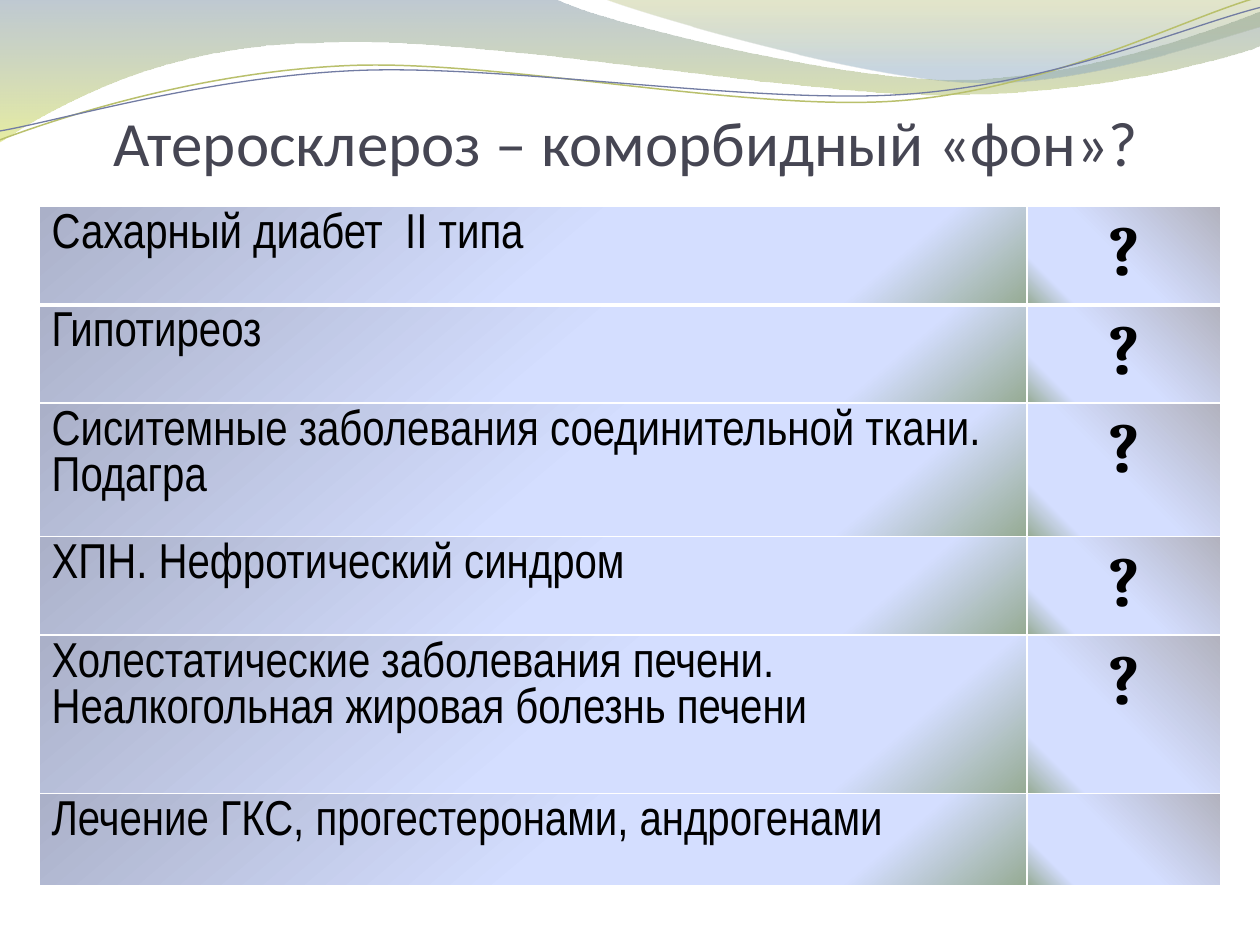
from dataclasses import dataclass
from math import cos, radians, sin

from lxml.etree import SubElement
from pptx import Presentation
from pptx.dml.color import RGBColor
from pptx.enum.text import MSO_ANCHOR, PP_ALIGN
from pptx.oxml import parse_xml
from pptx.oxml.ns import nsdecls, qn
from pptx.util import Inches, Pt


@dataclass(frozen=True)
class Theme:
    title: str = "464653"
    text: str = "000000"
    rule: str = "FFFFFF"
    green: str = "B9C06C"
    blue: str = "727CA3"
    title_size: int = 36
    text_size: int = 28
    mark_size: int = 40
    # Each stop: position %, colour, opacity %
    wave: tuple = ((0, "72889B", 45), (100, "D3DE57", 55))
    crest: tuple = ((0, "A4AC50", 30), (80, "84A3BD", 45))
    tail: tuple = ((53, "D4DEFF", 100), (83, "D4DEFF", 100), (100, "96AB94", 100))
    name_fill: tuple = ((0, "AAB0C8", 100),) + tail
    mark_fill: tuple = ((0, "B2B2BE", 100),) + tail


THEME = Theme()
TILT = 2.7

ROWS = (
    ("Сахарный диабет  II типа", "?", 0.78),
    ("Гипотиреоз", "?", 0.78),
    ("Сиситемные заболевания соединительной ткани. Подагра", "?", 1.06),
    ("ХПН. Нефротический синдром", "?", 0.78),
    ("Холестатические заболевания печени. Неалкогольная жировая болезнь печени",
     "?", 1.26),
    ("Лечение ГКС, прогестеронами, андрогенами", "", 0.73),
)

# Outlines: a start point, then straight steps (one point) or curves (three)
WAVE = (
    ((0, -0.01),), ((4.4, -0.01),),
    ((4.76, 0.17), (6.64, 0.63), (7.58, 0.63)),
    ((8.53, 0.63), (9.58, 0.26), (10, 0.09)),
    ((10.01, 0.36),),
    ((9.83, 0.44), (8.7, 0.76), (7.46, 0.75)),
    ((6.22, 0.75), (3.82, 0.28), (2.57, 0.34)),
    ((1.29, 0.35), (0.46, 0.83), (-0.01, 1.13)),
    ((0, -0.01),),
)
CREST = (
    ((4.79, -0.01),),
    ((5.09, 0.11), (6.82, 0.62), (7.69, 0.65)),
    ((8.56, 0.69), (9.61, 0.32), (10, 0.21)),
    ((10, 0),), ((4.79, -0.01),),
)
GREEN = (
    ((0, 1.11),),
    ((0.48, 0.93), (1.58, 0.57), (2.77, 0.52)),
    ((3.95, 0.47), (5.93, 0.89), (7.13, 0.8)),
    ((8.33, 0.71), (9.38, 0.15), (9.98, -0.02)),
)
BLUE = (
    ((0, 1.04),),
    ((0.47, 0.96), (1.64, 0.61), (2.83, 0.56)),
    ((4.03, 0.51), (5.97, 0.83), (7.17, 0.75)),
    ((8.36, 0.67), (9.41, 0.21), (10, 0.06)),
)


def turn(steps, center, angle):
    """Turn every point clockwise about the center."""
    a, (cx, cy) = radians(angle), center
    return [[(cx + (x - cx) * cos(a) - (y - cy) * sin(a),
              cy + (x - cx) * sin(a) + (y - cy) * cos(a)) for x, y in step]
            for step in steps]


def outline(slide, steps, close):
    """Draw a freeform, joining each three line steps of a curve into one."""
    pen, *rest = [(Inches(x), Inches(y)) for step in steps for x, y in step]
    draft = slide.shapes.build_freeform(*pen)
    draft.add_line_segments(rest, close=close)
    shape = draft.convert_to_shape()
    shape.shadow.inherit = False
    lines = iter(list(shape._element.spPr.iter(qn("a:lnTo"))))
    for step in steps[1:]:
        group = [next(lines) for _ in step]
        if len(group) == 3:
            curve = parse_xml(f'<a:cubicBezTo {nsdecls("a")}/>')
            group[0].addprevious(curve)
            for line in group:
                curve.append(line[0])
                line.getparent().remove(line)
    return shape


def shade(fill, props, stops, angle):
    """Fill with a gradient; the angle runs clockwise."""
    fill.gradient()
    fill.gradient_angle = (360 - angle) % 360
    group = props.find(qn("a:gradFill")).find(qn("a:gsLst"))
    for old in list(group):
        group.remove(old)
    for place, color, alpha in stops:
        stop = SubElement(group, qn("a:gs"), pos=str(place * 1000))
        tone = SubElement(stop, qn("a:srgbClr"), val=color)
        if alpha < 100:
            SubElement(tone, qn("a:alpha"), val=str(alpha * 1000))


def add_wave(slide, steps, stops):
    shape = outline(slide, steps, True)
    shade(shape.fill, shape._element.spPr, stops, 90)
    shape.line.fill.background()


def add_curve(slide, steps, center, color, width):
    """Draw a curve level, then tilt its frame into place."""
    shape = outline(slide, turn(steps, center, TILT), False)
    shape.rotation = 360 - TILT
    shape.fill.background()
    shape.line.color.rgb = RGBColor.from_string(color)
    shape.line.width = Pt(width)


def style(frame, face, size, color, align, bold=False):
    for par in frame.paragraphs:
        par.alignment = align
        for run in par.runs:
            font = run.font
            font.name, font.size, font.bold = face, Pt(size), bold
            font.color.rgb = RGBColor.from_string(color)


def add_title(slide, text):
    title = slide.shapes.title
    title.left, title.top = Inches(0.47), Inches(0.55)
    title.width, title.height = Inches(9), Inches(0.87)
    frame = title.text_frame
    frame.text = text
    frame.vertical_anchor = MSO_ANCHOR.BOTTOM
    frame.margin_left = frame.margin_right = frame.margin_bottom = 0
    frame.margin_top = Inches(0.05)
    style(frame, "Calibri", THEME.title_size, THEME.title, PP_ALIGN.CENTER)


def frame_cell(cell, top, base):
    """Draw the cell borders; top and base are widths in points."""
    props = cell._tc.get_or_add_tcPr()
    for side, width in (("L", 1), ("R", 1), ("T", top), ("B", base)):
        props.append(parse_xml(
            f'<a:ln{side} {nsdecls("a")} w="{Pt(width)}"><a:solidFill>'
            f'<a:srgbClr val="{THEME.rule}"/></a:solidFill></a:ln{side}>'))


def add_table(slide, rows):
    table = slide.shapes.add_table(
        len(rows), 2, Inches(0.31), Inches(1.64), Inches(9.38),
        Inches(sum(row[2] for row in rows))).table
    table.first_row = table.horz_banding = False
    table.columns[0].width, table.columns[1].width = Inches(7.84), Inches(1.54)
    looks = (
        ("Arial Narrow", THEME.text_size, PP_ALIGN.LEFT, False, THEME.name_fill, 50),
        ("Cambria", THEME.mark_size, PP_ALIGN.CENTER, True, THEME.mark_fill, 135),
    )
    for i, (name, mark, height) in enumerate(rows):
        table.rows[i].height = Inches(height)
        for j, text in enumerate((name, mark)):
            face, size, align, bold, stops, angle = looks[j]
            cell = table.cell(i, j)
            cell.text_frame.text = text
            style(cell.text_frame, face, size, THEME.text, align, bold)
            frame_cell(cell, 3 if i == 1 else 1, 3 if i == 0 else 1)
            shade(cell.fill, cell._tc.tcPr, stops, angle)


def main():
    deck = Presentation()
    deck.slide_width, deck.slide_height = Inches(10), Inches(7.5)
    slide = deck.slides.add_slide(deck.slide_layouts[5])
    add_wave(slide, WAVE, THEME.wave)
    add_wave(slide, CREST, THEME.crest)
    add_curve(slide, GREEN, (4.99, 0.58), THEME.green, 0.85)
    add_curve(slide, BLUE, (5, 0.59), THEME.blue, 0.75)
    add_title(slide, "Атеросклероз – коморбидный «фон»?")
    add_table(slide, ROWS)
    deck.save("out.pptx")


if __name__ == "__main__":
    main()
